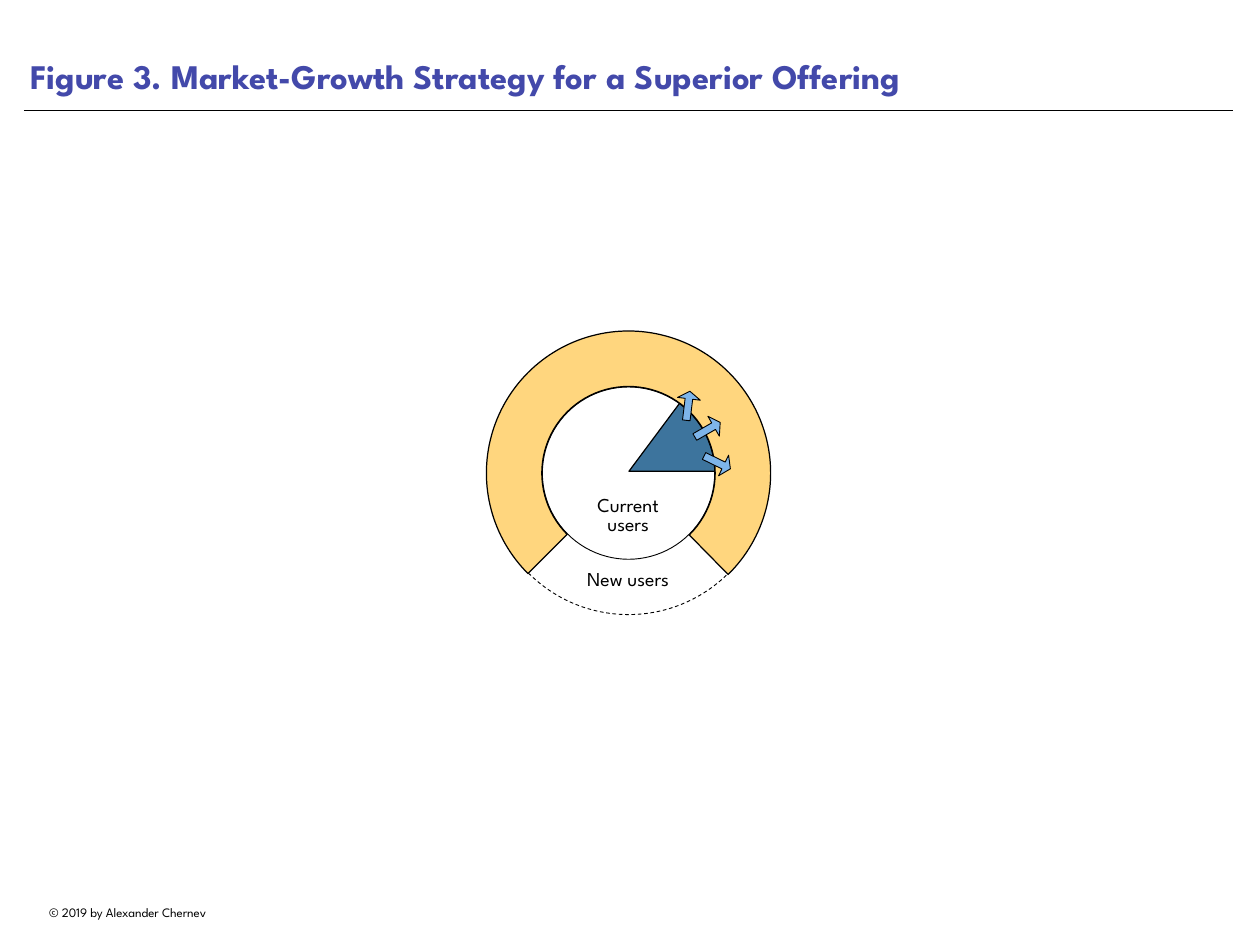
from pptx import Presentation
from pptx.dml.color import RGBColor
from pptx.enum.dml import MSO_LINE
from pptx.enum.shapes import MSO_CONNECTOR, MSO_SHAPE as SHAPE
from pptx.enum.text import MSO_ANCHOR as ANCHOR, MSO_AUTO_SIZE as AUTO, PP_ALIGN as ALIGN
from pptx.util import Pt
from lxml import etree

COLORS = {"ink": "000000", "title": "4349AA", "share": "3D749D",
          "new": "FFD67E", "arrow": "7EB5EA"}
FONT = "League Spartan"


def draw(shapes, kind, cx, cy, w, h, fill=None, weight=0.75, adj=()):
    sp = shapes.add_shape(kind, Pt(cx - w / 2), Pt(cy - h / 2), Pt(w), Pt(h))
    sp.shadow.inherit = False
    if fill:
        sp.fill.solid()
        sp.fill.fore_color.rgb = RGBColor.from_string(COLORS[fill])
    else:
        sp.fill.background()
    sp.line.color.rgb = RGBColor.from_string(COLORS["ink"])
    sp.line.width = Pt(weight)
    for i, value in enumerate(adj):
        sp.adjustments[i] = value
    return sp


def write(sp, text, size, color, align, anchor, inset, bold=False):
    tf = sp.text_frame
    tf.vertical_anchor = anchor
    tf.margin_left = tf.margin_right = tf.margin_top = tf.margin_bottom = Pt(inset)
    p = tf.paragraphs[0]
    p.alignment = align
    r = p.add_run()
    r.text = text
    r.font.name = FONT
    r.font.size = Pt(size)
    r.font.bold = bold
    r.font.color.rgb = RGBColor.from_string(COLORS[color])
    return tf


prs = Presentation()
prs.slide_width, prs.slide_height = Pt(1024), Pt(768)
s = prs.slides.add_slide(prs.slide_layouts[5])

title = s.shapes.title
title.left, title.top, title.width, title.height = Pt(19.5), Pt(0), Pt(982), Pt(83)
tf = write(title, "Figure 3. Market-Growth Strategy for a Superior Offering",
           28, "title", ALIGN.LEFT, ANCHOR.BOTTOM, 5, True)
tf.auto_size = AUTO.NONE
tf.word_wrap = True

rule = s.shapes.add_connector(MSO_CONNECTOR.STRAIGHT, Pt(19.5), Pt(89.3), Pt(1002), Pt(89.3))
rule.line.color.rgb = RGBColor.from_string(COLORS["ink"])
rule.line.width = Pt(0.5)
etree.SubElement(rule._element.spPr,
                 "{http://schemas.openxmlformats.org/drawingml/2006/main}effectLst")

footer = s.shapes.add_textbox(Pt(19.5), Pt(731.5), Pt(168.5), Pt(20))
tf = write(footer, "© 2019 by Alexander Chernev", 10.5, "ink", ALIGN.CENTER, ANCHOR.TOP, 3.6)
tf.word_wrap = False

diagram = s.shapes.add_group_shape().shapes
CX, CY = 510.8, 384.5

draw(diagram, SHAPE.PIE, CX + 0.4, CY - 1.5, 141, 141, "share", 1, (306.7 * 0.6, 0))
outer = draw(diagram, SHAPE.OVAL, CX, CY, 230, 230)
outer.line.dash_style = MSO_LINE.DASH
draw(diagram, SHAPE.BLOCK_ARC, CX, CY, 231, 231, "new", 1, (135 * 0.6, 45.5 * 0.6, 0.195))
draw(diagram, SHAPE.OVAL, CX, CY, 140, 140)

for x, y, angle in [(575, 349.2, 330), (559.2, 329.8, 277), (582.9, 375.8, 26)]:
    arrow = draw(diagram, SHAPE.RIGHT_ARROW, x, y, 23.8, 18.7, "arrow", adj=(0.33, 0.33))
    arrow.rotation = angle

for label, top, height in [("Current users", 397.5, 44), ("New users", 458, 28)]:
    box = diagram.add_textbox(Pt(463.7), Pt(top), Pt(93.6), Pt(height))
    tf = write(box, label, 16, "ink", ALIGN.CENTER, ANCHOR.MIDDLE, 4.3)
    tf.word_wrap = True
    tf.paragraphs[0].line_spacing = 0.8

prs.save("out.pptx")
